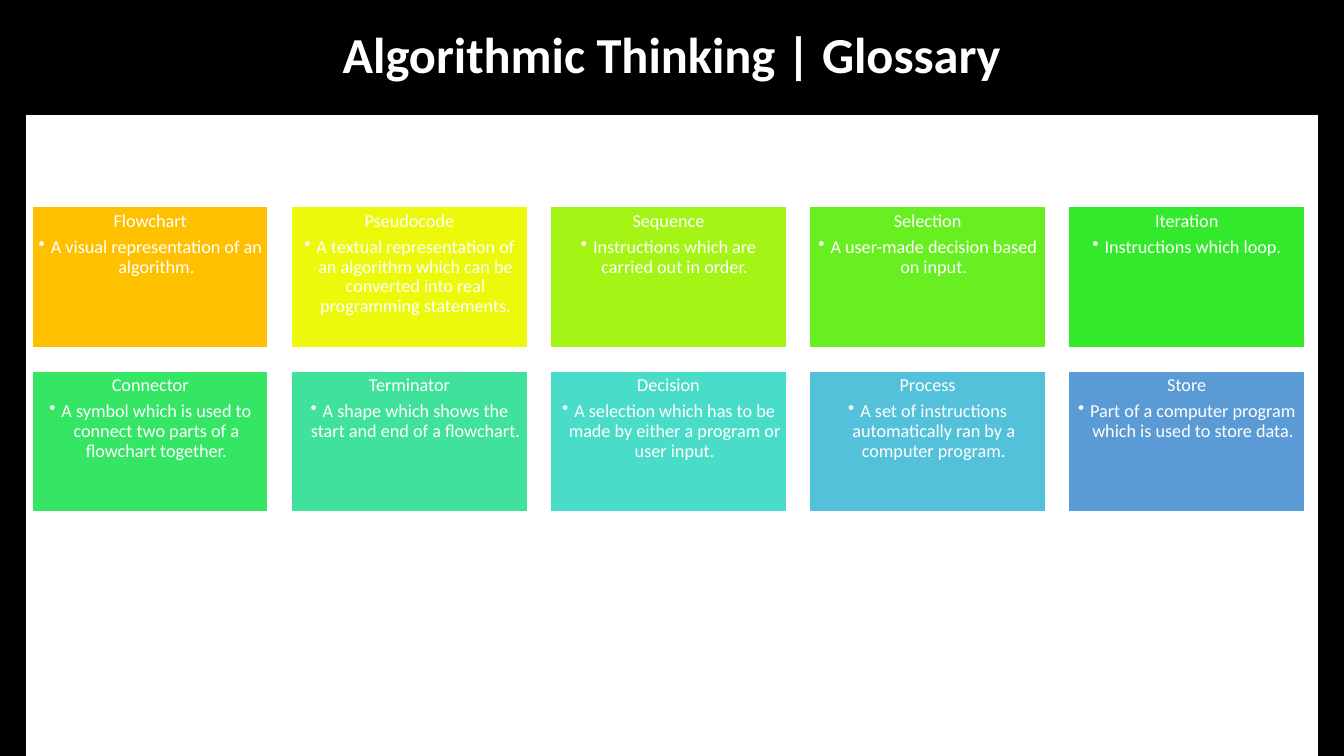
import lxml.etree
import pptx
import pptx.dml.color
import pptx.enum.shapes
import pptx.enum.text
import pptx.oxml.ns
import pptx.util

RGBColor = pptx.dml.color.RGBColor
BLACK = RGBColor(0x00, 0x00, 0x00)
WHITE = RGBColor(0xFF, 0xFF, 0xFF)
AMBER = RGBColor(0xFF, 0xC0, 0x00)
YELLOW = RGBColor(0xEC, 0xF9, 0x0B)
LIME = RGBColor(0xA4, 0xF4, 0x16)
LEAF = RGBColor(0x67, 0xEF, 0x21)
GREEN = RGBColor(0x32, 0xEA, 0x2B)
JADE = RGBColor(0x35, 0xE5, 0x64)
MINT = RGBColor(0x3F, 0xE1, 0x9B)
AQUA = RGBColor(0x49, 0xDD, 0xC9)
SKY = RGBColor(0x52, 0xC1, 0xD9)
BLUE = RGBColor(0x5B, 0x9B, 0xD5)

TERMS = [
    ("Flowchart", "A visual representation of an algorithm.", AMBER),
    ("Pseudocode", "A textual representation of an algorithm which can be "
     "converted into real programming statements.", YELLOW),
    ("Sequence", "Instructions which are carried out in order.", LIME),
    ("Selection", "A user-made decision based on input.", LEAF),
    ("Iteration", "Instructions which loop.", GREEN),
    ("Connector", "A symbol which is used to connect two parts of a "
     "flowchart together.", JADE),
    ("Terminator", "A shape which shows the start and end of a flowchart.", MINT),
    ("Decision", "A selection which has to be made by either a program or "
     "user input.", AQUA),
    ("Process", "A set of instructions automatically ran by a computer program.", SKY),
    ("Store", "Part of a computer program which is used to store data.", BLUE),
]


class Deck:
    wide, high = 13.33, 7.5
    font = "Calibri"
    left, top = 0.32, 2.05
    card_w, card_h = 2.34, 1.4
    gap = 0.23
    pad = 0.05
    indent = 0.12
    size = 13

    def __init__(self):
        self.show = pptx.Presentation()
        self.show.slide_width = pptx.util.Inches(self.wide)
        self.show.slide_height = pptx.util.Inches(self.high)
        self.slide = self.show.slides.add_slide(self.show.slide_layouts[6])

    def block(self, x, y, w, h, fill, line=None):
        box = [pptx.util.Inches(n) for n in (x, y, w, h)]
        shape = self.slide.shapes.add_shape(
            pptx.enum.shapes.MSO_SHAPE.RECTANGLE, *box)
        shape.shadow.inherit = False
        shape.fill.solid()
        shape.fill.fore_color.rgb = fill
        if line is None:
            shape.line.fill.background()
        else:
            shape.line.color.rgb = line
            shape.line.width = pptx.util.Pt(1)
        shape.text_frame.word_wrap = True
        return shape

    def label(self, para, text, size, bold=False, after=0):
        para.alignment = pptx.enum.text.PP_ALIGN.CENTER
        para.line_spacing = 0.9
        para.space_after = pptx.util.Pt(after)
        run = para.add_run()
        run.text = text
        run.font.name = self.font
        run.font.size = pptx.util.Pt(size)
        run.font.bold = bold
        run.font.color.rgb = WHITE

    def bullet(self, para):
        para.level = 1
        props = para._p.get_or_add_pPr()
        hang = pptx.util.Inches(self.indent)
        props.set("marL", str(hang))
        props.set("indent", str(-hang))
        mark = lxml.etree.SubElement(props, pptx.oxml.ns.qn("a:buChar"))
        mark.set("char", "•")

    def title(self, text, share):
        bar = self.block(0, 0, self.wide, share * self.high, BLACK)
        bar.text_frame.vertical_anchor = pptx.enum.text.MSO_ANCHOR.MIDDLE
        self.label(bar.text_frame.paragraphs[0], text, 36, bold=True)

    def side(self, x, y, w):
        self.block(x * self.wide, y * self.high, w * self.wide,
                   (1 - y) * self.high, BLACK, BLACK)

    def card(self, col, row, term, text, fill):
        x = self.left + col * (self.card_w + self.gap)
        y = self.top + row * (self.card_h + self.gap)
        frame = self.block(x, y, self.card_w, self.card_h, fill, WHITE).text_frame
        frame.vertical_anchor = pptx.enum.text.MSO_ANCHOR.TOP
        inset = pptx.util.Inches(self.pad)
        frame.margin_left = frame.margin_right = inset
        frame.margin_top = frame.margin_bottom = inset
        self.label(frame.paragraphs[0], term, self.size, after=0.35 * self.size)
        para = frame.add_paragraph()
        self.bullet(para)
        self.label(para, text, self.size, after=0.15 * self.size)


def main():
    deck = Deck()
    head, edge = 1.14 / deck.high, 0.25 / deck.wide
    deck.title("Algorithmic Thinking | Glossary", head)
    for x in (0, 1 - edge):
        deck.side(x, head, edge)
    for i, (term, text, fill) in enumerate(TERMS):
        row, col = divmod(i, 5)
        deck.card(col, row, term, text, fill)
    deck.show.save("out.pptx")


if __name__ == "__main__":
    main()
